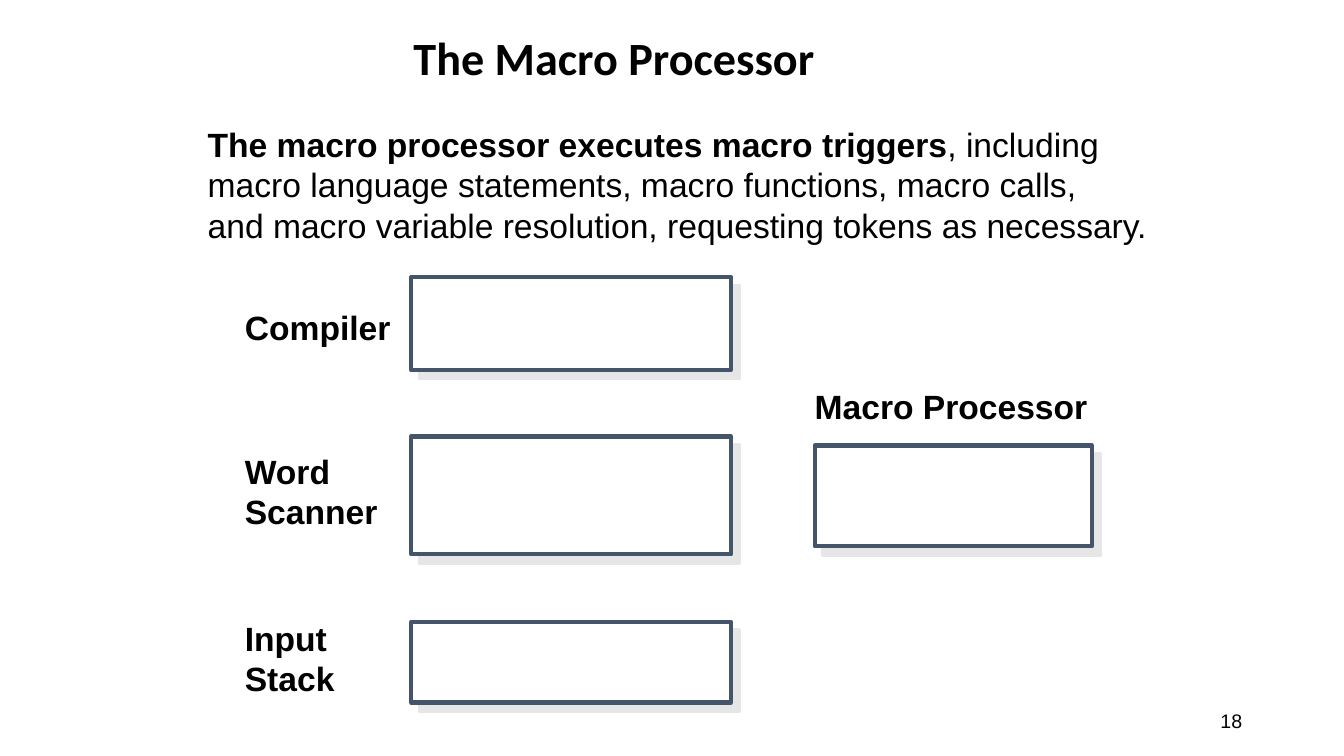
from dataclasses import dataclass

from lxml import etree
from pptx import Presentation
from pptx.dml.color import RGBColor
from pptx.enum.shapes import MSO_SHAPE
from pptx.enum.text import MSO_ANCHOR, MSO_AUTO_SIZE, PP_ALIGN
from pptx.oxml.ns import qn
from pptx.util import Inches, Pt

RECT = MSO_SHAPE.RECTANGLE
TOP, MIDDLE = MSO_ANCHOR.TOP, MSO_ANCHOR.MIDDLE
LEFT, RIGHT = PP_ALIGN.LEFT, PP_ALIGN.RIGHT

TITLE = "The Macro Processor"
LEAD = "The macro processor executes macro triggers"
LINES = [
    ", including ",
    "macro language statements, macro functions, macro calls, ",
    "and macro variable resolution, requesting tokens as necessary.",
]
# label, label top, box top, box height
STAGES = [
    ("Compiler", 3.0, 2.75, 0.92),
    ("Word\vScanner", 4.42, 4.33, 1.17),
    ("Input\vStack", 6.08, 6.17, 0.8),
]
SIDE = "Macro Processor"
PAGE = "18"


@dataclass
class Theme:
    head: str = "Calibri"
    body: str = "Arial"
    ink: str = "000000"
    fill: str = "FFFFFF"
    edge: str = "44546A"
    shade: str = "E7E6E6"
    title: int = 33
    text: int = 24
    page: int = 14


theme = Theme()


def color(code):
    return RGBColor.from_string(code)


def style(run, size, bold=False, face=theme.body):
    font = run.font
    font.name, font.size, font.bold = face, Pt(size), bold
    font.color.rgb = color(theme.ink)


def label(slide, text, left, top, wide, high, inset=(0.1, 0.05),
          size=theme.text, bold=True, align=LEFT, anchor=TOP):
    shape = slide.shapes.add_textbox(
        Inches(left), Inches(top), Inches(wide), Inches(high))
    frame = shape.text_frame
    frame.word_wrap = True
    frame.vertical_anchor = anchor
    frame.margin_left = frame.margin_right = Inches(inset[0])
    frame.margin_top = frame.margin_bottom = Inches(inset[1])
    para = frame.paragraphs[0]
    para.text = text
    para.alignment = align
    for run in para.runs:
        style(run, size, bold)
    return para


def box(slide, left, top, wide, high):
    """Draw an outlined box with a hard shadow to its lower right."""
    shape = slide.shapes.add_shape(
        RECT, Inches(left), Inches(top), Inches(wide), Inches(high))
    shape.fill.solid()
    shape.fill.fore_color.rgb = color(theme.fill)
    shape.line.color.rgb = color(theme.edge)
    shape.line.width = Pt(3)
    shape.shadow.inherit = False
    effects = shape._element.spPr.find(qn("a:effectLst"))
    shadow = etree.SubElement(
        effects, qn("a:outerShdw"), dist=str(Pt(8.5)), dir="2700000",
        algn="ctr", rotWithShape="0")
    etree.SubElement(shadow, qn("a:srgbClr"), val=theme.shade)


def heading(slide):
    title = slide.shapes.title
    title.left, title.top = Inches(4), Inches(0.03)
    title.width, title.height = Inches(5.17), Inches(1.14)
    frame = title.text_frame
    frame.text = TITLE
    frame.auto_size = MSO_AUTO_SIZE.NONE
    frame.vertical_anchor = MIDDLE
    para = frame.paragraphs[0]
    para.alignment, para.line_spacing = LEFT, 0.9
    style(para.runs[0], theme.title, True, theme.head)


def main():
    deck = Presentation()
    deck.slide_width, deck.slide_height = Inches(13.33), Inches(7.5)
    slide = deck.slides.add_slide(deck.slide_layouts[5])
    heading(slide)

    intro = label(slide, LEAD, 2, 1.17, 9.62, 1.32, (0.06, 0.06))
    for row, line in enumerate(LINES):
        if row:
            intro.add_line_break()
        run = intro.add_run()
        run.text = line
        style(run, theme.text)

    for name, top, edge, high in STAGES:
        rows = name.count("\v") + 1
        label(slide, name, 2.33, top, 1.75, 0.1 + 0.4 * rows)
        box(slide, 4.08, edge, 3.17, high)

    label(slide, SIDE, 8.08, 3.83, 2.9, 0.4, (0, 0))
    box(slide, 8.08, 4.42, 2.75, 1)
    label(slide, PAGE, 9.42, 6.95, 3, 0.4, size=theme.page, bold=False,
          align=RIGHT, anchor=MIDDLE)
    deck.save("out.pptx")


if __name__ == "__main__":
    main()
